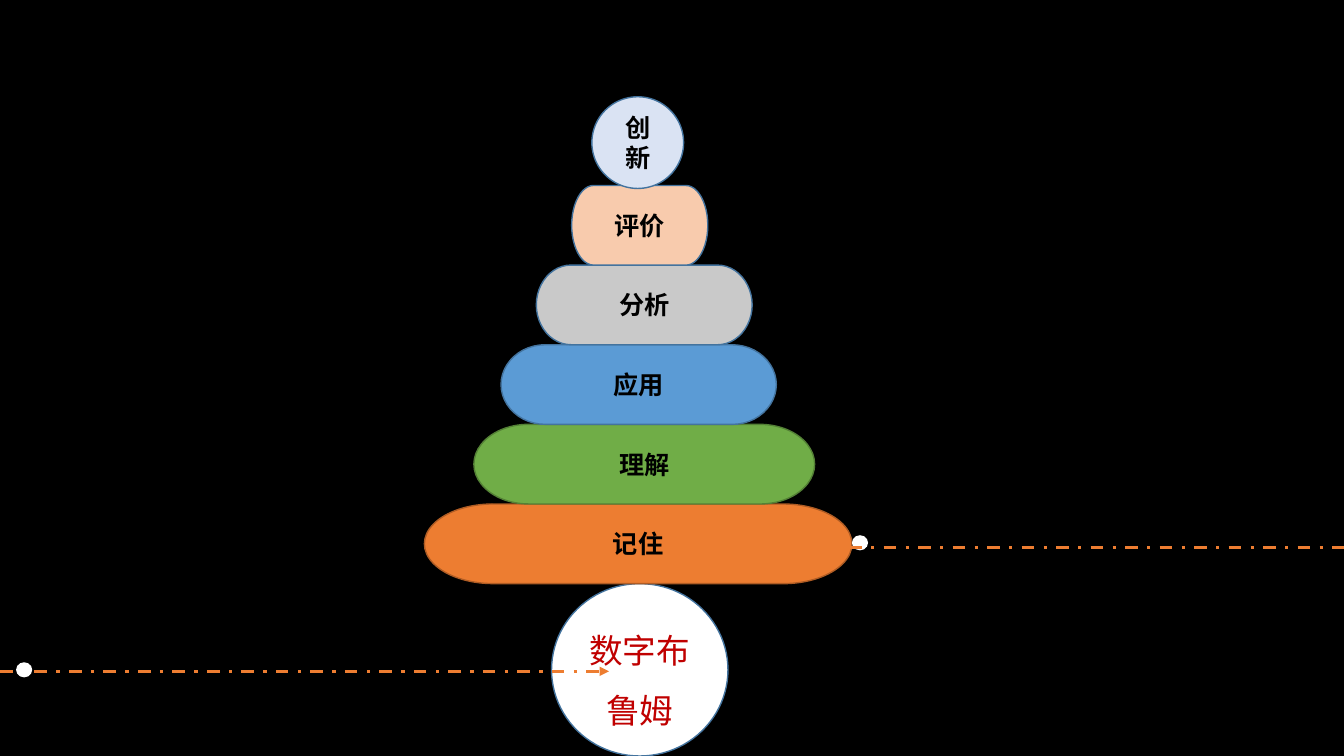
from lxml import etree
from pptx import Presentation
from pptx import util as u
from pptx.dml.color import RGBColor
from pptx.enum import dml, shapes, text
from pptx.oxml.ns import qn

PX = 9144  # one px is 0.01 inch
SANS = "Noto Sans CJK SC"
BLUE = "43739E"
ORANGE = "ED7D31"
KIND = shapes.MSO_SHAPE

# Word, left, width, fill and line, from the bottom up
TIERS = [
    ("记住", 421, 424, ORANGE, "AF5C24"),
    ("理解", 470, 338, "70AD47", "538035"),
    ("应用", 497, 273, "5B9BD5", BLUE),
    ("分析", 532, 214, "C9C9C9", BLUE),
    ("评价", 567, 135, "F8CBAD", BLUE),
]


def px(n):
    return u.Emu(n * PX)


def color(code):
    return RGBColor.from_string(code)


def add_form(slide, kind, box, fill, line=None):
    form = slide.shapes.add_shape(kind, *map(px, box))
    form.shadow.inherit = False
    form.fill.solid()
    form.fill.fore_color.rgb = color(fill)
    if line:
        form.line.color.rgb = color(line)
        form.line.width = u.Pt(1)
    else:
        form.line.fill.background()
    return form


def add_text(form, words, size, ink="000000", font="Calibri", bold=False):
    frame = form.text_frame
    frame.word_wrap = True
    frame.vertical_anchor = text.MSO_ANCHOR.MIDDLE
    para = frame.paragraphs[0]
    para.alignment = text.PP_ALIGN.CENTER
    run = para.add_run()
    run.text = words
    run.font.size = u.Pt(size)
    run.font.bold = bold
    run.font.name = font
    run.font.color.rgb = color(ink)
    return para, run


def add_arrow(slide, left, top, width):
    arrow = slide.shapes.add_connector(
        shapes.MSO_CONNECTOR.STRAIGHT, px(left), px(top), px(left + width), px(top))
    arrow.line.color.rgb = color(ORANGE)
    arrow.line.width = u.Pt(2.25)
    arrow.line.dash_style = dml.MSO_LINE.DASH_DOT
    props = arrow.line._get_or_add_ln()
    etree.SubElement(props, qn("a:tailEnd"), type="triangle")
    etree.SubElement(props.getparent(), qn("a:effectLst"))


def add_dot(slide, left, top):
    add_form(slide, KIND.OVAL, (left, top, 16, 15), "FFFFFF")


def add_base(slide, left, top, width, height):
    disc = add_form(slide, KIND.OVAL, (left, top, width, height), "FFFFFF", BLUE)
    para, run = add_text(disc, "数字布鲁姆", 24, "C00000", SANS)
    para.line_spacing = 1.5
    props = run.font._element
    etree.SubElement(props, qn("a:ea"), typeface=SANS)


def add_tower(slide, left, top, width, height):
    # Tiers rise from the foot of the box
    step = 79
    for i, (word, x, wide, fill, line) in enumerate(TIERS):
        box = (left + x - TIERS[0][1], top + height - step * (i + 1), wide, step)
        tier = add_form(slide, KIND.FLOWCHART_TERMINATOR, box, fill, line)
        add_text(tier, word, 18, bold=True)
    # Ball on top
    size = 91
    ball = add_form(slide, KIND.FLOWCHART_CONNECTOR,
                    (left + (width - size) // 2, top, size, size), "DAE3F3", BLUE)
    add_text(ball, "创新", 18, bold=True)


def main():
    deck = Presentation()
    deck.slide_width, deck.slide_height = px(1333), px(750)
    slide = deck.slides.add_slide(deck.slide_layouts[6])
    slide.background.fill.solid()
    slide.background.fill.fore_color.rgb = color("000000")

    # Base with the arrow leading in
    add_base(slide, 547, 579, 175, 171)
    add_arrow(slide, 0, 666, 604)
    add_dot(slide, 16, 657)

    # Tower with the arrow leading out past the edge
    add_tower(slide, 421, 96, 424, 483)
    add_dot(slide, 845, 531)
    add_arrow(slide, 808, 543, 604)

    deck.save("out.pptx")


if __name__ == "__main__":
    main()
